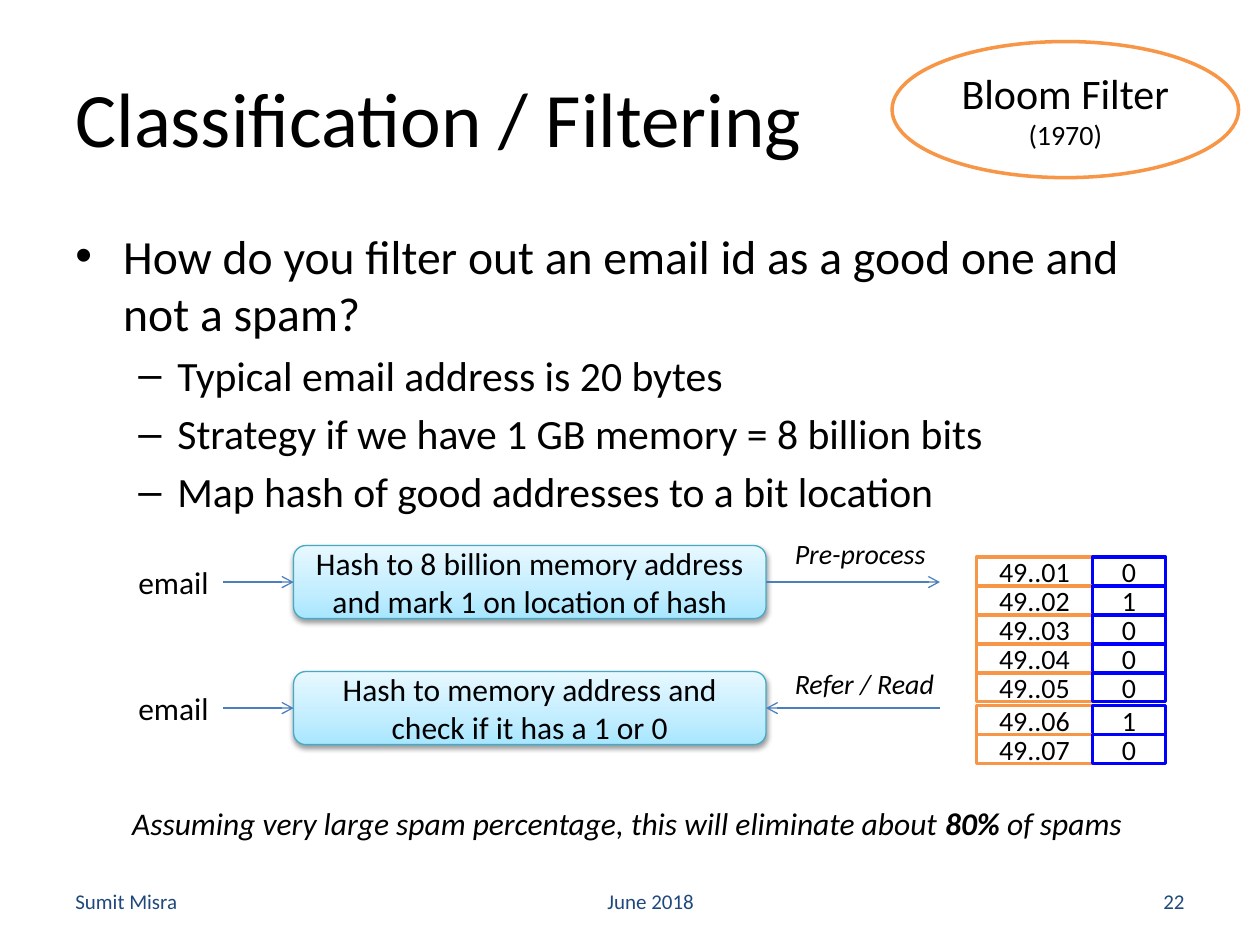
from copy import deepcopy

from lxml import etree
from pptx import Presentation
from pptx.dml.color import RGBColor
from pptx.enum.shapes import MSO_CONNECTOR, MSO_SHAPE
from pptx.enum.text import MSO_ANCHOR, PP_ALIGN
from pptx.oxml.ns import qn
from pptx.util import Inches, Pt

LEFT, CENTER, RIGHT = PP_ALIGN.LEFT, PP_ALIGN.CENTER, PP_ALIGN.RIGHT
TOP, MIDDLE = MSO_ANCHOR.TOP, MSO_ANCHOR.MIDDLE
RECT, ROUNDED, OVAL = MSO_SHAPE.RECTANGLE, MSO_SHAPE.ROUNDED_RECTANGLE, MSO_SHAPE.OVAL
STRAIGHT = MSO_CONNECTOR.STRAIGHT

FONT = "Calibri"
BLACK, WHITE, NAVY = "000000", "FFFFFF", "1F497D"
ORANGE, BLUE, TEAL, ARROW = "F79646", "0000FF", "46AAC5", "4B7EBC"
HASH_STOPS = [(0, "A7E6FF"), (0.35, "C1EDFF"), (1, "E7F8FF")]


def rgb(value):
    return RGBColor.from_string(value)


def add_xml(parent, tag, **attrs):
    return etree.SubElement(parent, qn(tag), attrs)


def add_run(p, text, size=18, color=BLACK, bold=False, italic=False):
    r = p.add_run()
    r.text = text
    r.font.name, r.font.size = FONT, Pt(size)
    r.font.bold, r.font.italic = bold, italic
    r.font.color.rgb = rgb(color)


def set_bullet(p, char, margin, hang):
    pPr = p._p.get_or_add_pPr()
    pPr.set("marL", str(Inches(margin)))
    pPr.set("indent", str(-Inches(hang)))
    add_xml(pPr, "a:buFont", typeface="Arial")
    add_xml(pPr, "a:buChar", char=char)


def fill_gradient(sp, stops, angle):
    sp.fill.gradient()
    sp.fill.gradient_angle = angle
    gs_list = sp._element.spPr.find(qn("a:gradFill")).find(qn("a:gsLst"))
    while len(gs_list) < len(stops):
        gs_list.append(deepcopy(gs_list[-1]))
    for stop, (position, color) in zip(sp.fill.gradient_stops, stops):
        stop.position = position
        stop.color.rgb = rgb(color)


def drop_shadow(sp):
    effects = sp._element.spPr.find(qn("a:effectLst"))
    shadow = add_xml(effects, "a:outerShdw", blurRad=str(Pt(3.1)), dist=str(Pt(1.6)),
                     dir="5400000", rotWithShape="0")
    add_xml(add_xml(shadow, "a:srgbClr", val=BLACK), "a:alpha", val="38000")


class SlideBuilder:
    def __init__(self, slide):
        self.shapes = slide.shapes

    def text(self, x, y, w, h, text="", align=LEFT, anchor=TOP, wrap=True, **style):
        """Add a text box and return its text frame."""
        tf = self.shapes.add_textbox(Inches(x), Inches(y), Inches(w), Inches(h)).text_frame
        tf.word_wrap, tf.vertical_anchor = wrap, anchor
        tf.paragraphs[0].alignment = align
        if text:
            add_run(tf.paragraphs[0], text, **style)
        return tf

    def bullets(self, x, y, w, h, items):
        tf = self.text(x, y, w, h)
        for i, (level, text) in enumerate(items):
            p = tf.add_paragraph() if i else tf.paragraphs[0]
            p.level = level
            if i:
                p.space_before = Pt(4.8)
            if level:
                set_bullet(p, "–", 0.81, 0.31)
            else:
                set_bullet(p, "•", 0.38, 0.38)
            add_run(p, text, size=23.8 if level else 27.2)

    def shape(self, kind, x, y, w, h, lines, line, width=2.0, fill=WHITE):
        """Add an outlined shape; lines holds (text, size) pairs."""
        sp = self.shapes.add_shape(kind, Inches(x), Inches(y), Inches(w), Inches(h))
        if fill:
            sp.fill.solid()
            sp.fill.fore_color.rgb = rgb(fill)
        sp.line.color.rgb, sp.line.width = rgb(line), Pt(width)
        sp.shadow.inherit = False
        tf = sp.text_frame
        tf.word_wrap, tf.vertical_anchor = True, MIDDLE
        for i, (text, size) in enumerate(lines):
            p = tf.add_paragraph() if i else tf.paragraphs[0]
            p.alignment = CENTER
            add_run(p, text, size=size)
        return sp

    def hash_box(self, x, y, text):
        sp = self.shape(ROUNDED, x, y, 3.75, 0.58, [(text, 18)], TEAL, 0.75, fill=None)
        fill_gradient(sp, HASH_STOPS, 90)
        drop_shadow(sp)

    def arrow(self, x1, x2, y):
        cn = self.shapes.add_connector(STRAIGHT, Inches(x1), Inches(y), Inches(x2), Inches(y))
        cn.line.color.rgb, cn.line.width = rgb(ARROW), Pt(0.75)
        add_xml(cn.line._get_or_add_ln(), "a:tailEnd", type="arrow")
        add_xml(cn._element.spPr, "a:effectLst")


def main():
    prs = Presentation()
    prs.slide_width, prs.slide_height = Inches(10), Inches(7.5)
    s = SlideBuilder(prs.slides.add_slide(prs.slide_layouts[6]))

    s.text(0.5, 0.3, 9, 1.25, "Classification / Filtering", anchor=MIDDLE, size=44)
    s.bullets(0.5, 1.75, 9, 2.08, [
        (0, "How do you filter out an email id as a good one and not a spam?"),
        (1, "Typical email address is 20 bytes"),
        (1, "Strategy if we have 1 GB memory = 8 billion bits"),
        (1, "Map hash of good addresses to a bit location"),
    ])

    for x, w, text, align in [(4, 2.33, "June 2018", CENTER),
                              (0.5, 3.17, "Sumit Misra", LEFT),
                              (7.17, 2.33, "22", RIGHT)]:
        s.text(x, 6.95, w, 0.4, text, align, MIDDLE, size=12, color=NAVY)

    box_left, box_right, memory_x = 2.33, 6.08, 7.46
    flows = [
        (4.33, "Hash to 8 billion memory address and mark 1 on location of hash",
         "Pre-process", 4.21, 1.25, (box_right, memory_x)),
        (5.33, "Hash to memory address and check if it has a 1 or 0",
         "Refer / Read", 5.24, 1.32, (memory_x, box_right)),
    ]
    for y, step, label, label_y, label_w, (start, end) in flows:
        s.text(1, y + 0.09, 0.77, 0.4, "email", wrap=False)
        s.hash_box(box_left, y, step)
        s.arrow(1.77, box_left, y + 0.29)
        s.arrow(start, end, y + 0.29)
        s.text(6.21, label_y, label_w, 0.37, label, wrap=False, size=16, italic=True)

    row_h, group_gap, group_size = 0.23, 0.03, 5
    for i, bit in enumerate("0100010"):
        y = 4.42 + i * row_h + i // group_size * group_gap
        s.shape(RECT, 7.75, y, 0.92, row_h, [(f"49..{i + 1:02}", 16)], ORANGE)
        s.shape(RECT, 8.67, y, 0.58, row_h, [(bit, 16)], BLUE)

    p = s.text(0.95, 6.33, 8.13, 0.4, wrap=False).paragraphs[0]
    add_run(p, "Assuming very large spam percentage, this will eliminate about ", italic=True)
    add_run(p, "80%", italic=True, bold=True)
    add_run(p, " of spams", italic=True)

    s.shape(OVAL, 7.08, 0.33, 2.75, 1.08, [("Bloom Filter", 24), ("(1970)", 16)], ORANGE)
    prs.save("out.pptx")


if __name__ == "__main__":
    main()
